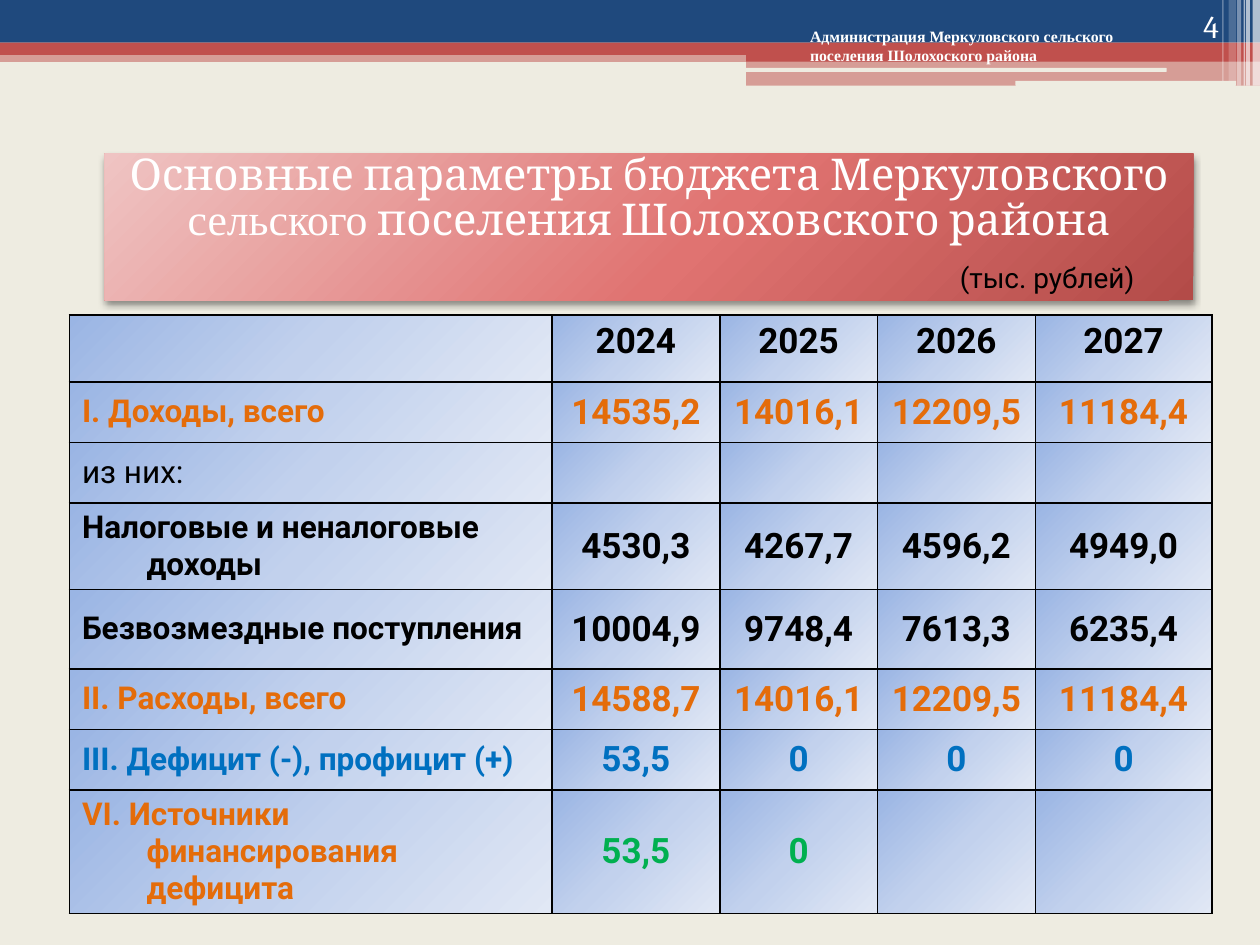
from lxml import etree
from pptx import Presentation
from pptx.dml.color import RGBColor
from pptx.enum.shapes import MSO_SHAPE as SHAPE
from pptx.enum.text import MSO_ANCHOR as ANCHOR, MSO_AUTO_SIZE as AUTO, PP_ALIGN as ALIGN
from pptx.oxml import parse_xml
from pptx.oxml.ns import nsdecls, qn
from pptx.util import Cm, Pt

CREAM = RGBColor(0xEE, 0xEC, 0xE1)
NAVY = RGBColor(0x1F, 0x49, 0x7D)
RED = RGBColor(0xC0, 0x50, 0x4D)
WHITE = RGBColor(0xFF, 0xFF, 0xFF)
BLACK = RGBColor(0, 0, 0)
ORANGE = RGBColor(0xE4, 0x6C, 0x0A)
BLUE = RGBColor(0x00, 0x70, 0xC0)
GREEN = RGBColor(0x00, 0xB0, 0x50)
TITLE_STOPS = [(0, RGBColor(0xEF, 0xC4, 0xC3)), (55, RGBColor(0xE0, 0x73, 0x71)),
               (100, RGBColor(0xB3, 0x4B, 0x48))]
CELL_STOPS = [(0, RGBColor(0x9A, 0xB5, 0xE4)), (50, RGBColor(0xC2, 0xD1, 0xED)),
              (100, RGBColor(0xE1, 0xE8, 0xF5))]


def write(p, text, size=18, color=BLACK, font="Roboto", bold=False, align=ALIGN.LEFT, hanging=0):
    """Add a run to a paragraph and format both."""
    p.alignment = align
    if hanging:
        pPr = p._p.get_or_add_pPr()
        pPr.set("marL", str(hanging))
        pPr.set("indent", str(-hanging))
    r = p.add_run()
    r.text = text
    r.font.size, r.font.name, r.font.bold = Pt(size), font, bold
    r.font.color.rgb = color


def add_gradient(parent, stops, left, top, right, bottom):
    """Append a circular gradient whose centre is given in percent."""
    gs = "".join(f'<a:gs pos="{pos * 1000}"><a:srgbClr val="{color}"/></a:gs>' for pos, color in stops)
    parent.append(parse_xml(
        f'<a:gradFill {nsdecls("a")} rotWithShape="1"><a:gsLst>{gs}</a:gsLst><a:path path="circle">'
        f'<a:fillToRect l="{left * 1000}" t="{top * 1000}" r="{right * 1000}" b="{bottom * 1000}"/>'
        '</a:path></a:gradFill>'))


prs = Presentation()
prs.slide_width, prs.slide_height = Cm(25.4), Cm(19.05)
s = prs.slides.add_slide(prs.slide_layouts[5])
s.background.fill.solid()
s.background.fill.fore_color.rgb = CREAM

# Header bars and vertical stripes: shape, left, top, width, height, colour, opacity
bars = [
    (SHAPE.RECTANGLE, 0, 1.02, 25.4, 0.23, RED, 50),
    (SHAPE.RECTANGLE, 0, 0, 25.4, 0.86, NAVY, 100),
    (SHAPE.RECTANGLE, 0, 0.86, 25.4, 0.25, RED, 100),
    (SHAPE.RECTANGLE, 15.04, 0.99, 10.36, 0.25, RED, 100),
    (SHAPE.RECTANGLE, 15.04, 1.22, 10.36, 0.51, RED, 50),
    (SHAPE.ROUNDED_RECTANGLE, 15.01, 1.37, 8.51, 0.08, CREAM, 100),
    (SHAPE.ROUNDED_RECTANGLE, 20.47, 1.63, 4.45, 0.1, CREAM, 100),
]
stripes = [(25.25, 0.15, 1.73, 65), (25.12, 0.08, 1.73, 65), (25.07, 0.03, 1.73, 60),
           (24.94, 0.08, 1.73, 40), (24.77, 0.15, 1.63, 20), (24.64, 0.03, 1.63, 30)]
bars += [(SHAPE.RECTANGLE, x, 0, w, h, WHITE, opacity) for x, w, h, opacity in stripes]
for kind, x, y, w, h, color, opacity in bars:
    sp = s.shapes.add_shape(kind, Cm(x), Cm(y), Cm(w), Cm(h))
    sp.shadow.inherit = False
    sp.line.fill.background()
    sp.fill.solid()
    sp.fill.fore_color.rgb = color
    if opacity < 100:
        clr = sp.fill._xPr.find(".//" + qn("a:srgbClr"))
        etree.SubElement(clr, qn("a:alpha")).set("val", str(opacity * 1000))

# Title
title = s.shapes.title
title.left, title.top, title.width, title.height = Cm(2.11), Cm(3.1), Cm(21.95), Cm(2.95)
spPr = title._element.spPr
add_gradient(spPr, TITLE_STOPS, -40, -90, 140, 190)
spPr.append(parse_xml(
    f'<a:effectLst {nsdecls("a")}><a:outerShdw blurRad="{Pt(4)}" dist="{Pt(2)}" dir="5400000" '
    'rotWithShape="0"><a:srgbClr val="000000"><a:alpha val="45000"/></a:srgbClr>'
    '</a:outerShdw></a:effectLst>'))
tf = title.text_frame
tf.auto_size, tf.word_wrap = AUTO.NONE, True
tf.vertical_anchor, tf.margin_top = ANCHOR.TOP, 0
p = tf.paragraphs[0]
p.line_spacing = 0.87
for text, font in [("Основные параметры бюджета Меркуловского ", "Cambria"),
                   ("сельского", "Times New Roman"),
                   (" поселения Шолоховского района", "Cambria")]:
    write(p, text, size=25, color=WHITE, font=font, align=ALIGN.CENTER)

# Budget table: label, values, label colour, value colour, bold label
rows = [
    ("", ["2024", "2025", "2026", "2027"], BLACK, BLACK, True),
    ("I. Доходы, всего", ["14535,2", "14016,1", "12209,5", "11184,4"], ORANGE, ORANGE, True),
    ("из них:", [""] * 4, BLACK, BLACK, False),
    ("Налоговые и неналоговые доходы", ["4530,3", "4267,7", "4596,2", "4949,0"], BLACK, BLACK, True),
    ("Безвозмездные поступления", ["10004,9", "9748,4", "7613,3", "6235,4"], BLACK, BLACK, True),
    ("II. Расходы, всего", ["14588,7", "14016,1", "12209,5", "11184,4"], ORANGE, ORANGE, True),
    ("III. Дефицит (-), профицит (+)", ["53,5", "0", "0", "0"], BLUE, BLUE, True),
    ("VI. Источники финансирования дефицита", ["53,5", "0", "", ""], ORANGE, GREEN, True),
]
col_widths = [9.73, 3.38, 3.18, 3.18, 3.56]
row_heights = [1.35, 1.22, 1.22, 1.42, 1.6, 1.22, 1.22, 2.08]
table = s.shapes.add_table(len(rows), len(col_widths), Cm(1.4), Cm(6.35),
                           Cm(sum(col_widths)), Cm(sum(row_heights))).table
table.first_row = table.horz_banding = False
for column, width in zip(table.columns, col_widths):
    column.width = Cm(width)
for i, (label, values, label_color, value_color, bold) in enumerate(rows):
    table.rows[i].height = Cm(row_heights[i])
    for j, text in enumerate([label] + values):
        cell = table.cell(i, j)
        cell.vertical_anchor = ANCHOR.MIDDLE if i else ANCHOR.TOP
        tcPr = cell._tc.get_or_add_tcPr()
        for side in "LRTB":
            tcPr.append(parse_xml(
                f'<a:ln{side} {nsdecls("a")} w="{Pt(1)}"><a:solidFill><a:srgbClr val="{BLACK}"/>'
                f'</a:solidFill></a:ln{side}>'))
        add_gradient(tcPr, CELL_STOPS, 0, 0, 100, 100)
        if text:
            write(cell.text_frame.paragraphs[0], text, size=20 if j else 18,
                  color=value_color if j else label_color, bold=bold,
                  align=ALIGN.CENTER if j else ALIGN.LEFT, hanging=Cm(1.3))

# Unit note, slide number and header text
texts = [
    ("(тыс. рублей)", 19.1, 5.13, 5.59, 0.94, ANCHOR.TOP, dict(size=16)),
    ("4", 22.71, 0, 2.11, 1.02, ANCHOR.BOTTOM,
     dict(size=18, color=WHITE, font="Cambria", align=ALIGN.RIGHT)),
    ("Администрация Меркуловского сельского поселения Шолохоского района",
     16.08, 0.41, 7.9, 1.02, ANCHOR.TOP,
     dict(size=9, color=WHITE, font="Times New Roman", bold=True)),
]
for text, x, y, w, h, anchor, style in texts:
    tf = s.shapes.add_textbox(Cm(x), Cm(y), Cm(w), Cm(h)).text_frame
    tf.word_wrap, tf.vertical_anchor = True, anchor
    write(tf.paragraphs[0], text, **style)

prs.save("out.pptx")
